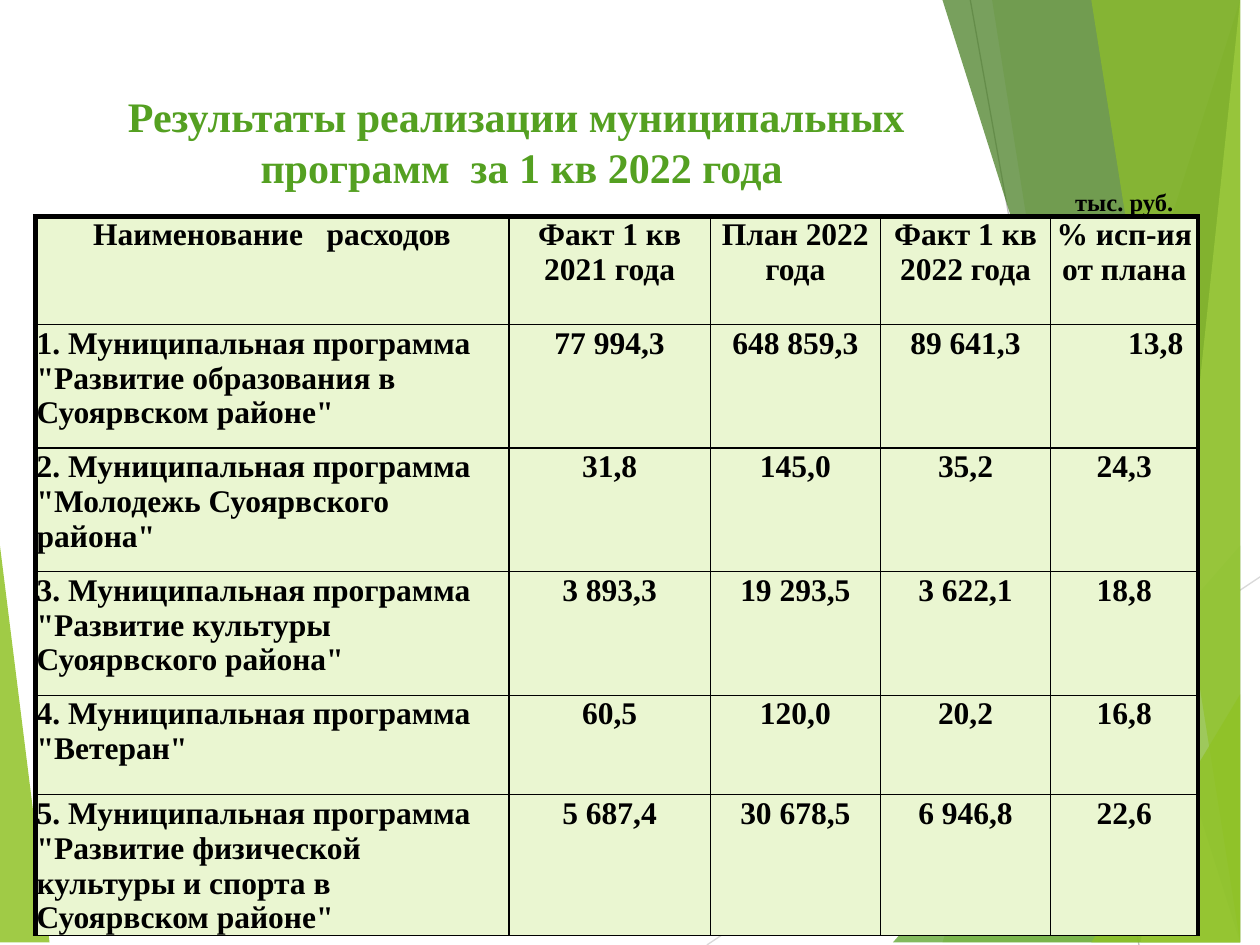
from dataclasses import dataclass

from lxml import etree
from pptx import Presentation
from pptx.dml.color import RGBColor
from pptx.enum.shapes import MSO_CONNECTOR
from pptx.enum.text import MSO_ANCHOR, MSO_AUTO_SIZE, PP_ALIGN
from pptx.oxml.ns import qn
from pptx.util import Cm, Pt

STRAIGHT = MSO_CONNECTOR.STRAIGHT
TOP, BOTTOM = MSO_ANCHOR.TOP, MSO_ANCHOR.BOTTOM
LEFT, CENTER = PP_ALIGN.LEFT, PP_ALIGN.CENTER
NO_TABLE_STYLE = "{2D5ABB26-0587-4C30-8999-92F81FD0307C}"


@dataclass(frozen=True)
class Theme:
    font: str = "Times New Roman"
    lime: str = "90C226"
    green: str = "54A021"
    forest: str = "3F7819"
    pale: str = "C0E474"
    light_gray: str = "D9D9D9"
    gray: str = "BFBFBF"
    ink: str = "000000"
    cell: str = "EAF6D1"
    title_size: int = 24
    body_size: int = 18
    unit_size: int = 14


theme = Theme()


def write_text(tf, text, size=theme.body_size, color=theme.ink, align=CENTER, anchor=TOP):
    tf.word_wrap = True
    tf.vertical_anchor = anchor
    p = tf.paragraphs[0]
    p.text = text
    p.alignment = align
    for r in p.runs:
        r.font.name = theme.font
        r.font.size = Pt(size)
        r.font.bold = True
        r.font.color.rgb = RGBColor.from_string(color)
    return p


def add_border(cell, side, width):
    tc_pr = cell._tc.get_or_add_tcPr()
    ln = etree.SubElement(tc_pr, qn(f"a:ln{side}"), w=str(Pt(width)))
    if width:
        fill = etree.SubElement(ln, qn("a:solidFill"))
        etree.SubElement(fill, qn("a:srgbClr"), val=theme.ink)
    else:
        etree.SubElement(ln, qn("a:noFill"))


prs = Presentation()
prs.slide_width, prs.slide_height = Cm(25.4), Cm(19.05)
slide = prs.slides.add_slide(prs.slide_layouts[5])
shapes = slide.shapes

facets = [
    (theme.lime, 85, [(-0.03, 11.15), (1.24, 19.08), (-0.03, 19.05)]),
    (theme.light_gray, 100, [(14.25, 19.05), (25.43, 11.61)]),
    (theme.gray, 100, [(19.56, 0), (22.96, 19.05)]),
    (theme.lime, 30, [(24.77, 0), (19.15, 19.05), (25.45, 19.08), (25.43, 0.03)]),
    (theme.lime, 20, [(20.02, -0.03), (23.34, 19.05), (25.43, 19.05), (25.43, -0.03)]),
    (theme.green, 72, [(18.44, 19.05), (25.4, 10.9), (25.43, 19.05)]),
    (theme.forest, 70, [(19.48, -0.03), (24.64, 19.05), (25.43, 19.02), (25.43, -0.03)]),
    (theme.pale, 70, [(24.92, -0.03), (23.04, 19.05), (25.43, 19.05), (25.4, -0.03)]),
    (theme.lime, 65, [(22.43, -0.03), (25.04, 19.05), (25.4, 19.05), (25.35, -0.03)]),
    (theme.lime, 80, [(22.38, 19.05), (25.43, 13.59), (25.43, 19.02)]),
]
for color, opacity, points in facets:
    if len(points) == 2:
        (x1, y1), (x2, y2) = points
        line = shapes.add_connector(STRAIGHT, Cm(x1), Cm(y1), Cm(x2), Cm(y2))
        line.line.color.rgb = RGBColor.from_string(color)
        line.line.width = Pt(0.75)
        etree.SubElement(line._element.spPr, qn("a:effectLst"))
        continue
    builder = shapes.build_freeform(*points[0], scale=Cm(1))
    builder.add_line_segments(points[1:], close=True)
    sp = builder.convert_to_shape()
    sp.shadow.inherit = False
    sp.line.fill.background()
    sp.fill.solid()
    sp.fill.fore_color.rgb = RGBColor.from_string(color)
    clr = sp._element.spPr.find(f".//{qn('a:srgbClr')}")
    etree.SubElement(clr, qn("a:alpha"), val=str(opacity * 1000))

title = shapes.title
title.left, title.top, title.width, title.height = Cm(1.7), Cm(1.7), Cm(17.63), Cm(3.66)
write_text(title.text_frame, "Результаты реализации муниципальных \vпрограмм  за 1 кв 2022 года",
           size=theme.title_size, color=theme.green)
title.text_frame.auto_size = MSO_AUTO_SIZE.NONE
shapes._spTree.append(title._element)

rows = [
    ["", "", "", "", " тыс. руб. "],
    ["Наименование   расходов", "Факт 1 кв 2021 года", "План 2022 года",
     "Факт 1 кв 2022 года", "% исп-ия от плана"],
    ['1. Муниципальная программа "Развитие образования в Суоярвском районе"',
     "77 994,3", "648 859,3", "89 641,3", "13,8"],
    ['2. Муниципальная программа "Молодежь Суоярвского района"',
     "31,8", "145,0", "35,2", "24,3"],
    ['3. Муниципальная программа "Развитие культуры Суоярвского района"',
     "3 893,3", "19 293,5", "3 622,1", "18,8"],
    ['4. Муниципальная программа "Ветеран"', "60,5", "120,0", "20,2", "16,8"],
    ['5. Муниципальная программа "Развитие физической культуры и спорта в Суоярвском районе"',
     "5 687,4", "30 678,5", "6 946,8", "22,6"],
]
col_widths = [9.55, 4.06, 3.43, 3.43, 2.97]
row_heights = [0.41, 2.18, 2.49, 2.49, 2.49, 2.01, 2.54]
column_rules = [3, 1, 1, 1, 1, 3]
row_rules = [0, 3, 1, 1, 0.5, 0.5, 0.5, 0.5]

frame = shapes.add_table(len(rows), len(col_widths), Cm(0.71), Cm(3.73),
                         Cm(sum(col_widths)), Cm(sum(row_heights)))
table = frame.table
table._tbl.tblPr.find(qn("a:tableStyleId")).text = NO_TABLE_STYLE
for column, width in zip(table.columns, col_widths):
    column.width = Cm(width)
for row, height in zip(table.rows, row_heights):
    row.height = Cm(height)

for i, texts in enumerate(rows):
    for j, text in enumerate(texts):
        cell = table.cell(i, j)
        cell.margin_left = cell.margin_right = cell.margin_top = Cm(0.03)
        cell.margin_bottom = 0
        unit_row = i == 0
        p = write_text(cell.text_frame, text,
                       size=theme.unit_size if unit_row else theme.body_size,
                       align=LEFT if j == 0 and i > 1 else CENTER)
        cell.vertical_anchor = BOTTOM if unit_row else TOP
        if not text:
            etree.SubElement(p._p, qn("a:endParaRPr"), sz=str(theme.unit_size * 100))
        if text == "13,8":
            p.level = 1
            p._p.get_or_add_pPr().set("marL", str(Cm(1.27)))
        add_border(cell, "L", 0 if unit_row else column_rules[j])
        add_border(cell, "R", 0 if unit_row else column_rules[j + 1])
        add_border(cell, "T", row_rules[i])
        add_border(cell, "B", row_rules[i + 1])
        if unit_row:
            cell.fill.background()
        else:
            cell.fill.solid()
            cell.fill.fore_color.rgb = RGBColor.from_string(theme.cell)
table.cell(0, 1).merge(table.cell(0, 3))

prs.save("out.pptx")
